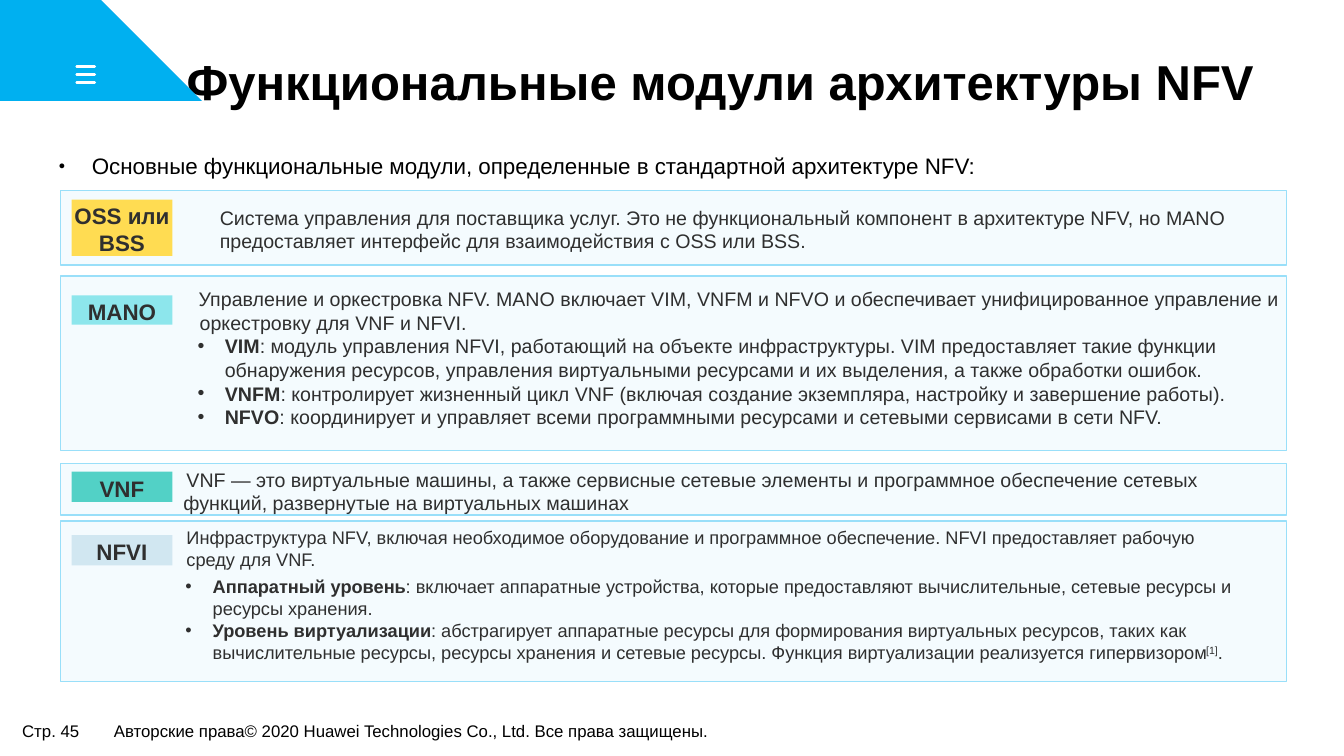
from pptx import Presentation
from pptx.util import Inches, Pt
from pptx.dml.color import RGBColor
from pptx.enum.shapes import MSO_SHAPE, MSO_CONNECTOR
from pptx.enum.text import MSO_ANCHOR, MSO_AUTO_SIZE, PP_ALIGN
from pptx.oxml.ns import qn
from lxml.etree import SubElement

BLACK = RGBColor(0, 0, 0)
WHITE = RGBColor(255, 255, 255)
INK = RGBColor(0x2F, 0x2F, 0x2F)
SKY = RGBColor(0x00, 0xB0, 0xF0)
BLUE = RGBColor(0x0B, 0x9C, 0xE5)
PALE = RGBColor(0xF4, 0xFB, 0xFE)
EDGE = RGBColor(0x99, 0xDF, 0xF9)
GOLD = RGBColor(0xFF, 0xDC, 0x52)
AQUA = RGBColor(0x8D, 0xE6, 0xEC)
TEAL = RGBColor(0x52, 0xD1, 0xC6)
MIST = RGBColor(0xD1, 0xE7, 0xF1)

HEAD = "Функциональные модули архитектуры NFV"
LEAD = "Основные функциональные модули, определенные в стандартной архитектуре NFV:"
PAGE = "Стр. 45"
RIGHTS = "Авторские права© 2020 Huawei Technologies Co., Ltd. Все права защищены."

OSS = [["Система управления для поставщика услуг. Это не функциональный компонент в архитектуре NFV, "
        "но MANO предоставляет интерфейс для взаимодействия с OSS или BSS."]]
MANO = [
    ["Управление и оркестровка NFV. MANO включает VIM, VNFM и NFVO и обеспечивает "
     "унифицированное управление и оркестровку для VNF и NFVI."],
    ["VIM", ": модуль управления NFVI, работающий на объекте инфраструктуры. VIM предоставляет такие функции "
     "обнаружения ресурсов, управления виртуальными ресурсами и их выделения, а также обработки ошибок."],
    ["VNFM", ": контролирует жизненный цикл VNF (включая создание экземпляра, настройку и завершение работы)."],
    ["NFVO", ": координирует и управляет всеми программными ресурсами и сетевыми сервисами в сети NFV."],
]
VNF = [["VNF — это виртуальные машины, а также сервисные сетевые элементы и программное обеспечение "
        "сетевых функций, развернутые на виртуальных машинах"]]
NFVI = [
    ["Инфраструктура NFV, включая необходимое оборудование и программное обеспечение. "
     "NFVI предоставляет рабочую среду для VNF."],
    ["Аппаратный уровень", ": включает аппаратные устройства, которые предоставляют вычислительные, "
     "сетевые ресурсы и ресурсы хранения."],
    ["Уровень виртуализации", ": абстрагирует аппаратные ресурсы для формирования виртуальных ресурсов, "
     "таких как вычислительные ресурсы, ресурсы хранения и сетевые ресурсы. Функция виртуализации "
     "реализуется гипервизором", "[1]", "."],
]

# fmt: off
PANELS = [
    (1.89, 0.74, "OSS или BSS", GOLD, 0.09, 0.56, (1.55, 0.15, 10.71), (0.03, 0), 14, 0, OSS),
    (2.74, 1.73, "MANO", AQUA, 0.19, 0.29, (1.34, 0.11, 10.93), (0.04, -0.01), 14, 0, MANO),
    (4.6, 0.51, "VNF", TEAL, 0.08, 0.3, (1.21, 0.04, 10.77), (0.01, 0.03), 14, 0, VNF),
    (5.17, 1.59, "NFVI", MIST, 0.14, 0.3, (1.22, 0.05, 10.54), (0.03, 0), 13, 4.2, NFVI),
]


def style(run, size, color, bold=False):
    """Set the font of a run."""
    font = run.font
    font.name, font.size, font.bold = "Arial", Pt(size), bold
    font.color.rgb = color


def inset(frame, side, top, low=None):
    """Set wrapping and margins of a text frame."""
    frame.word_wrap = True
    frame.auto_size = MSO_AUTO_SIZE.NONE
    frame.margin_left = frame.margin_right = Inches(side)
    frame.margin_top = Inches(top)
    frame.margin_bottom = Inches(top if low is None else low)


def indent(para, left, first, mark=None, scale=100):
    """Set the indent of a paragraph and its bullet, if any."""
    props = para._p.get_or_add_pPr()
    props.set("marL", str(Inches(left)))
    props.set("indent", str(Inches(first)))
    if mark:
        SubElement(props, qn("a:buSzPct")).set("val", str(scale * 1000))
        SubElement(props, qn("a:buFont")).set("typeface", "Arial")
        SubElement(props, qn("a:buChar")).set("char", mark)
    else:
        SubElement(props, qn("a:buNone"))


def place(shape, left, top, width, height):
    """Move and size a shape."""
    shape.left, shape.top = Inches(left), Inches(top)
    shape.width, shape.height = Inches(width), Inches(height)


def block(slide, left, top, width, height, fill, edge=None):
    """Draw a filled rectangle."""
    rect = slide.shapes.add_shape(MSO_SHAPE.RECTANGLE, Inches(left), Inches(top), Inches(width), Inches(height))
    rect.shadow.inherit = False
    rect.fill.solid()
    rect.fill.fore_color.rgb = fill
    if edge is None:
        rect.line.fill.background()
    else:
        rect.line.color.rgb = edge
        rect.line.width = Pt(1)
    return rect


def outline(slide, points, fill=None):
    """Draw a closed polygon, filled or as a white outline."""
    pen = slide.shapes.build_freeform(*points[0], scale=Inches(1))
    pen.add_line_segments(points[1:])
    form = pen.convert_to_shape()
    form.shadow.inherit = False
    if fill is None:
        form.fill.background()
        form.line.color.rgb = WHITE
        form.line.width = Pt(2.2)
    else:
        form.fill.solid()
        form.fill.fore_color.rgb = fill
        form.line.fill.background()


def banner(slide, top, height):
    """Draw the arrow banner with its receipt icon."""
    mid, low = top + height / 2, top + height
    outline(slide, [(0, top), (1.32, top), (1.51, mid), (1.32, low), (0, low)], SKY)
    outline(slide, [(1.36, top), (1.42, top), (1.62, mid), (1.42, low), (1.36, low), (1.56, mid)], BLUE)
    crown, hem = top + 0.25, top + 0.7
    hems = [(1.01 - 0.08 * i, hem - 0.04 * (i % 2)) for i in range(5)]
    outline(slide, [(0.655, crown + 0.03), (0.685, crown), (1.005, crown), (1.035, crown + 0.03),
                    (1.035, hem - 0.02), *hems, (0.655, hem - 0.02)])
    for step in range(3):
        y = Inches(top + 0.34 + 0.08 * step)
        rule = slide.shapes.add_connector(MSO_CONNECTOR.STRAIGHT, Inches(0.76), y, Inches(0.94), y)
        rule.line.color.rgb = WHITE
        rule.line.width = Pt(1.8)
        rule.line._get_or_add_ln().set("cap", "rnd")
        SubElement(rule._element.spPr, qn("a:effectLst"))


def header(slide, left, top, width, height):
    """Fill the title placeholder."""
    title = slide.shapes.title
    place(title, left, top, width, height)
    frame = title.text_frame
    frame.text = HEAD
    inset(frame, 0.11, 0.06)
    frame.vertical_anchor = MSO_ANCHOR.MIDDLE
    para = frame.paragraphs[0]
    para.alignment, para.line_spacing = PP_ALIGN.LEFT, 0.9
    style(para.runs[0], 35, BLACK, True)


def intro(slide, left, top, width, height):
    """Fill the body placeholder with the lead line."""
    body = slide.placeholders[1]
    place(body, left, top, width, height)
    frame = body.text_frame
    frame.text = LEAD
    inset(frame, 0.09, 0.04)
    frame.vertical_anchor = MSO_ANCHOR.TOP
    para = frame.paragraphs[0]
    indent(para, 0.33, -0.33, "●", 50)
    para.alignment, para.line_spacing, para.space_before = PP_ALIGN.JUSTIFY, 1.4, Pt(0)
    style(para.runs[0], 16, BLACK)


def panel(slide, left, width, spec):
    """Draw one module panel with its label and description."""
    top, height, name, color, drop, tall, text, first, size, gap, items = spec
    block(slide, left, top, width, height, PALE, EDGE)
    label = block(slide, left + 0.11, top + drop, 1, tall, color)
    frame = label.text_frame
    frame.text = name
    inset(frame, 0, 0.03, 0)
    frame.vertical_anchor = MSO_ANCHOR.MIDDLE
    frame.paragraphs[0].alignment = PP_ALIGN.CENTER
    style(frame.paragraphs[0].runs[0], 16, INK, True)

    dx, dy, wide = text
    box = slide.shapes.add_textbox(Inches(left + dx), Inches(top + dy), Inches(wide), Inches(height - dy))
    frame = box.text_frame
    inset(frame, 0, 0)
    for row, parts in enumerate(items):
        para = frame.add_paragraph() if row else frame.paragraphs[0]
        if row:
            indent(para, 0.29, -0.27, "•")
        else:
            indent(para, *first)
        if row == 1:
            para.space_before = Pt(gap)
        for order, part in enumerate(parts):
            run = para.add_run()
            run.text = part
            style(run, size, INK, row > 0 and order == 0)
            if part == "[1]":
                run._r.get_or_add_rPr().set("baseline", "30000")


def footer(slide, top):
    """Write the page number and the rights line."""
    for left, width, words in ((0.13, 0.77, PAGE), (1.04, 6.36, RIGHTS)):
        box = slide.shapes.add_textbox(Inches(left), Inches(top), Inches(width), Inches(0.29))
        frame = box.text_frame
        frame.text = words
        inset(frame, 0.09, 0.04)
        frame.word_wrap = False
        style(frame.paragraphs[0].runs[0], 12, BLACK)


def main():
    """Build the slide and save it."""
    deck = Presentation()
    deck.slide_width, deck.slide_height = Inches(13.33), Inches(7.5)
    slide = deck.slides.add_slide(deck.slide_layouts[1])
    footer(slide, 7.11)
    banner(slide, 0.32, 0.95)
    header(slide, 1.74, 0.49, 11.02, 0.7)
    intro(slide, 0.49, 1.36, 12.36, 0.47)
    for spec in PANELS:
        panel(slide, 0.6, 12.16, spec)
    deck.save("out.pptx")


if __name__ == "__main__":
    main()
